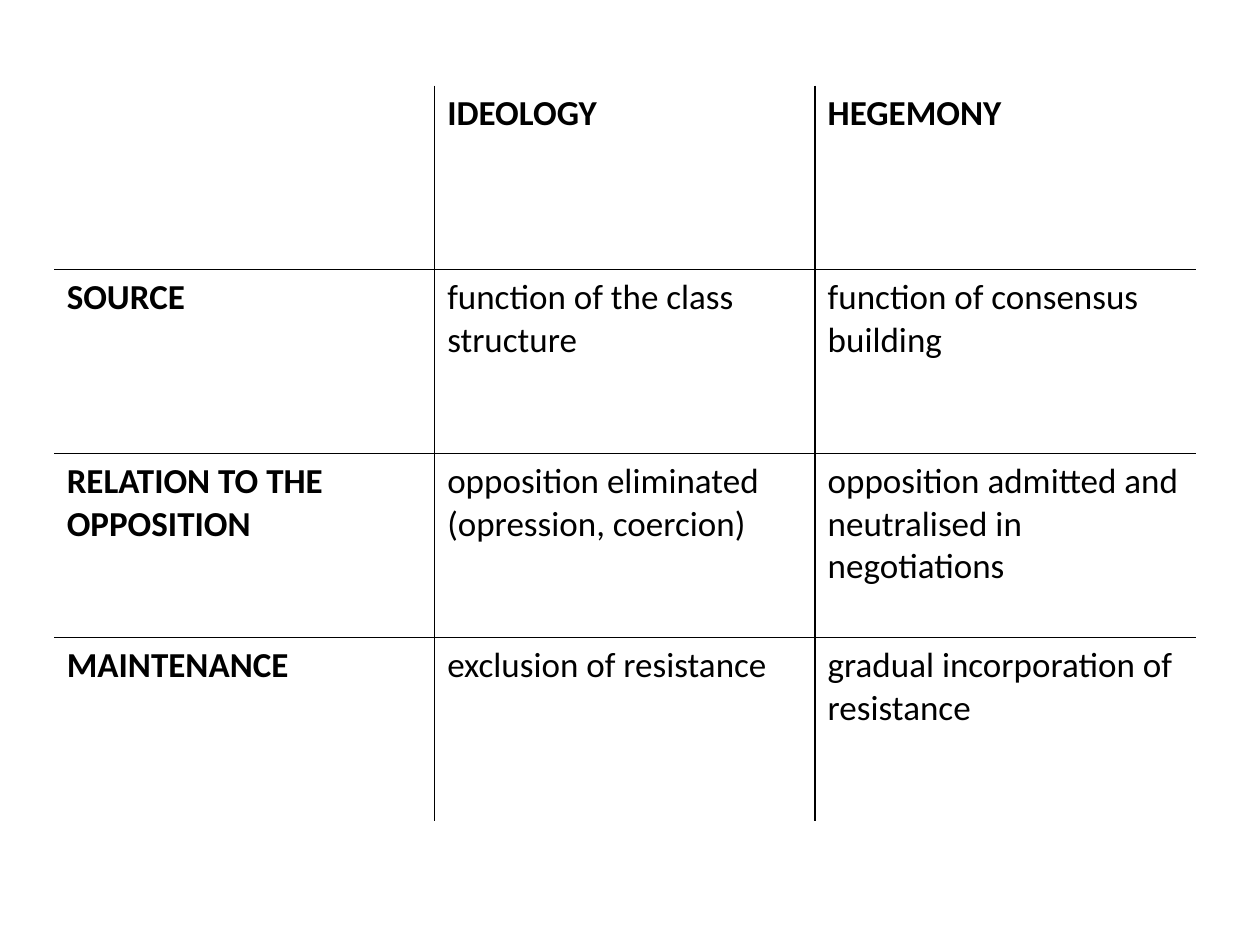
from dataclasses import dataclass

from lxml import etree
from pptx import Presentation
from pptx import util as u
from pptx.dml.color import RGBColor
from pptx.oxml import ns
from pptx.table import Table, _Cell

COLOURS = {"ink": "000000"}
FONT = "Calibri"
COLUMN_WIDTH = u.Inches(3.02)
ROW_HEIGHT = u.Inches(1.46)


@dataclass
class ComparisonRow:
    label: str
    ideology: str
    hegemony: str


ROWS = [
    ComparisonRow("", "IDEOLOGY", "HEGEMONY"),
    ComparisonRow(
        "SOURCE",
        "function of the class structure",
        "function of consensus building",
    ),
    ComparisonRow(
        "RELATION TO THE OPPOSITION",
        "opposition eliminated (opression, coercion)",
        "opposition admitted and neutralised in negotiations",
    ),
    ComparisonRow(
        "MAINTENANCE",
        "exclusion of resistance",
        "gradual incorporation of resistance",
    ),
]


def set_borders(cell: _Cell, visible: dict[str, bool]) -> None:
    properties = cell._tc.get_or_add_tcPr()
    for side, shown in visible.items():
        line = etree.SubElement(properties, ns.qn(f"a:{side}"), w=str(u.Pt(1)))
        if shown:
            fill = etree.SubElement(line, ns.qn("a:solidFill"))
            etree.SubElement(fill, ns.qn("a:srgbClr"), val=COLOURS["ink"])
        else:
            etree.SubElement(line, ns.qn("a:noFill"))


def write_cell(cell: _Cell, content: str, bold: bool) -> None:
    cell.text = content
    font = cell.text_frame.paragraphs[0].font
    font.name = FONT
    font.size = u.Pt(20)
    font.bold = bold
    font.color.rgb = RGBColor.from_string(COLOURS["ink"])


def fill_table(table: Table, rows: list[ComparisonRow]) -> None:
    last_row, last_column = len(table.rows) - 1, len(table.columns) - 1
    for r, row in enumerate(rows):
        for c, content in enumerate((row.label, row.ideology, row.hegemony)):
            cell = table.cell(r, c)
            write_cell(cell, content, bold=r == 0 or c == 0)
            set_borders(cell, {
                "lnL": c > 0,
                "lnR": c < last_column,
                "lnT": r > 0,
                "lnB": r < last_row,
            })
            cell.fill.background()


def main() -> None:
    presentation = Presentation()
    presentation.slide_width = u.Inches(10)
    presentation.slide_height = u.Inches(7.5)
    slide = presentation.slides.add_slide(presentation.slide_layouts[6])
    table = slide.shapes.add_table(
        len(ROWS), 3, u.Inches(0.43), u.Inches(0.68),
        COLUMN_WIDTH * 3, ROW_HEIGHT * len(ROWS),
    ).table
    table.first_row = False
    table.horz_banding = False
    fill_table(table, ROWS)
    presentation.save("out.pptx")


if __name__ == "__main__":
    main()
